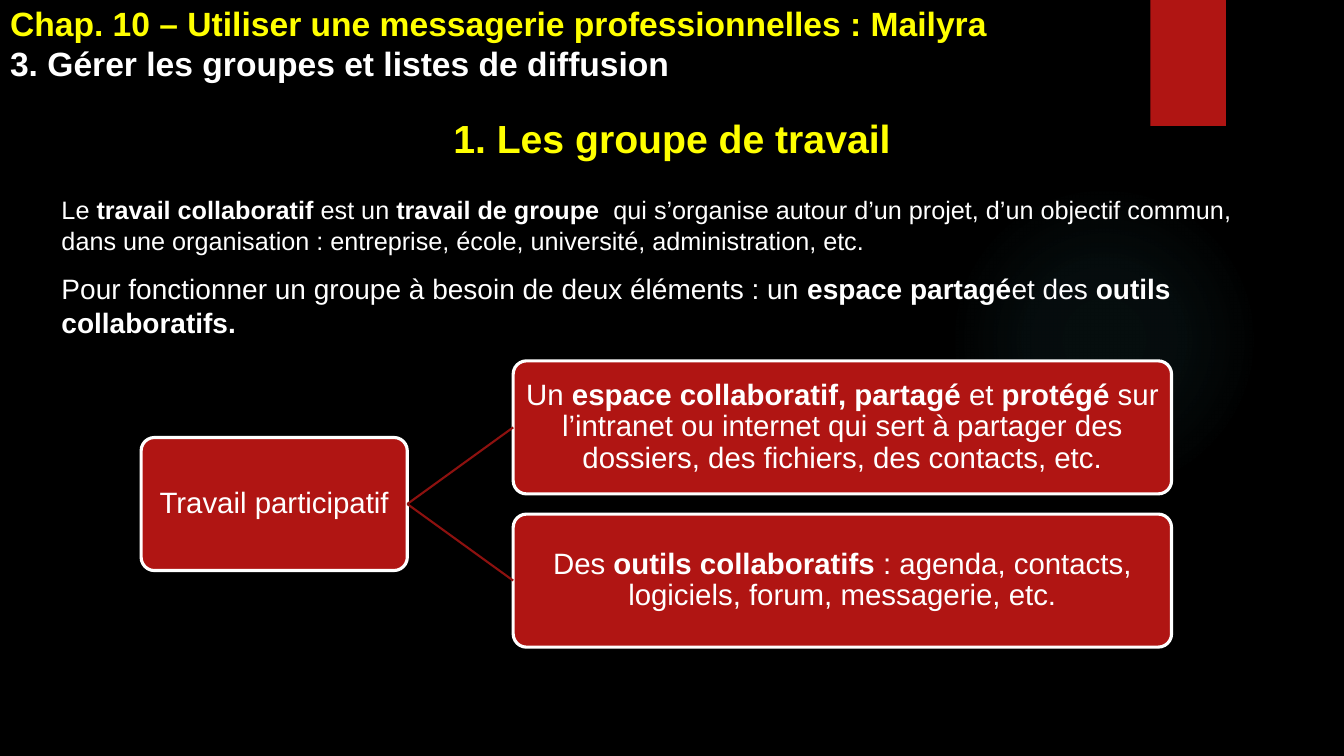
import pptx
import pptx.dml.color
import pptx.enum.shapes
import pptx.enum.text
import pptx.oxml
import pptx.oxml.ns
import pptx.util
from dataclasses import dataclass

Inches = pptx.util.Inches
Pt = pptx.util.Pt
SHAPE = pptx.enum.shapes.MSO_SHAPE
ALIGN = pptx.enum.text.PP_ALIGN
ANCHOR = pptx.enum.text.MSO_ANCHOR


@dataclass(frozen=True)
class Theme:
    font: str = "Arial"
    background: str = "000000"
    text: str = "FFFFFF"
    accent: str = "FFFF00"
    red: str = "B01513"
    link: str = "8D110F"
    glow: str = "50B9C1"
    header_size: float = 24
    heading_size: float = 28
    intro_size: float = 18
    needs_size: float = 20
    box_size: float = 21


def rgb(value):
    return pptx.dml.color.RGBColor.from_string(value)


class SlideBuilder:
    def __init__(self, prs, theme):
        self.theme = theme
        self.s = prs.slides.add_slide(prs.slide_layouts[1])
        self.s.background.fill.solid()
        self.s.background.fill.fore_color.rgb = rgb(theme.background)

    def shape(self, kind, left, top, width, height):
        sp = self.s.shapes.add_shape(
            kind, Inches(left), Inches(top), Inches(width), Inches(height))
        sp.shadow.inherit = False
        sp.fill.solid()
        sp.fill.fore_color.rgb = rgb(self.theme.red)
        sp.line.fill.background()
        return sp

    def send_to_back(self, sp):
        self.s.shapes._spTree.insert(2, sp._element)

    def ribbon(self, left, top, width, height):
        self.send_to_back(self.shape(SHAPE.RECTANGLE, left, top, width, height))

    def glow(self, left, top, size):
        """Draw a disc that fades out from its centre."""
        sp = self.shape(SHAPE.OVAL, left, top, size, size)
        stops = "".join(
            f'<a:gs pos="{pos}000"><a:srgbClr val="{self.theme.glow}">'
            f'<a:alpha val="{alpha}000"/></a:srgbClr></a:gs>'
            for pos, alpha in ((0, 7), (36, 6), (69, 0)))
        gradient = pptx.oxml.parse_xml(
            f'<a:gradFill {pptx.oxml.ns.nsdecls("a")}><a:gsLst>{stops}</a:gsLst>'
            '<a:path path="circle"><a:fillToRect l="50000" t="50000" r="50000"'
            ' b="50000"/></a:path></a:gradFill>')
        solid = sp._element.spPr.find(pptx.oxml.ns.qn("a:solidFill"))
        sp._element.spPr.replace(solid, gradient)
        self.send_to_back(sp)

    def paragraph(self, p, text, size, color, align=ALIGN.LEFT, before=0, spacing=1.0):
        """Fill a paragraph; text between asterisks is bold."""
        p.alignment = align
        p.space_before = Pt(before)
        p.line_spacing = spacing
        for i, part in enumerate(text.split("*")):
            if part:
                r = p.add_run()
                r.text = part
                r.font.name = self.theme.font
                r.font.size = Pt(size)
                r.font.bold = i % 2 == 1
                r.font.color.rgb = rgb(color)

    def placeholder(self, index, left, top, width, height, anchor, paragraphs):
        sp = self.s.placeholders[index]
        sp.left, sp.top = Inches(left), Inches(top)
        sp.width, sp.height = Inches(width), Inches(height)
        tf = sp.text_frame
        tf.word_wrap = True
        tf.auto_size = pptx.enum.text.MSO_AUTO_SIZE.NONE
        tf.vertical_anchor = anchor
        for i, options in enumerate(paragraphs):
            p = tf.add_paragraph() if i else tf.paragraphs[0]
            pPr = p._p.get_or_add_pPr()
            pPr.set("marL", "0")
            pPr.set("indent", "0")
            pPr.append(pptx.oxml.parse_xml(
                f'<a:buNone {pptx.oxml.ns.nsdecls("a")}/>'))
            self.paragraph(p, **options)

    def box(self, left, top, width, height, text):
        sp = self.shape(SHAPE.ROUNDED_RECTANGLE, left, top, width, height)
        sp.adjustments[0] = 0.1
        sp.line.color.rgb = rgb(self.theme.text)
        sp.line.width = Pt(2.25)
        tf = sp.text_frame
        tf.word_wrap = True
        tf.vertical_anchor = ANCHOR.MIDDLE
        tf.margin_left = tf.margin_right = Inches(0.05)
        tf.margin_top = tf.margin_bottom = Inches(0.05)
        self.paragraph(tf.paragraphs[0], text, self.theme.box_size,
                       self.theme.text, ALIGN.CENTER, spacing=0.9)
        return sp

    def link(self, parent, child):
        line = self.s.shapes.add_connector(
            pptx.enum.shapes.MSO_CONNECTOR.STRAIGHT, 0, 0, 0, 0)
        line.begin_connect(parent, 3)
        line.end_connect(child, 1)
        line.line.color.rgb = rgb(self.theme.link)
        line.line.width = Pt(1.5)
        line._element.spPr.append(pptx.oxml.parse_xml(
            f'<a:effectLst {pptx.oxml.ns.nsdecls("a")}/>'))


def main():
    prs = pptx.Presentation()
    prs.slide_width, prs.slide_height = Inches(13.33), Inches(7.5)
    theme = Theme()
    slide = SlideBuilder(prs, theme)

    slide.ribbon(11.41, 0, 0.75, 1.25)
    slide.glow(9.41, 1.83, 3.08)

    slide.placeholder(0, 0, -0.01, 11.81, 0.89, ANCHOR.BOTTOM, [
        dict(text="*Chap. 10 – Utiliser une messagerie professionnelles : Mailyra*",
             size=theme.header_size, color=theme.accent),
        dict(text="*3. Gérer les groupes et listes de diffusion*",
             size=theme.header_size, color=theme.text),
    ])
    slide.placeholder(1, 0.51, 1.08, 12.31, 2.36, ANCHOR.TOP, [
        dict(text="*1. Les groupe de travail*", size=theme.heading_size,
             color=theme.accent, align=ALIGN.CENTER),
        dict(text="Le *travail collaboratif *est un *travail de groupe  *qui s’organise "
                  "autour d’un projet, d’un objectif commun, dans une organisation : "
                  "entreprise, école, université, administration, etc.",
             size=theme.intro_size, color=theme.text, before=24),
        dict(text="Pour fonctionner un groupe à besoin de deux éléments : un "
                  "*espace partagé*et des *outils collaboratifs.*",
             size=theme.needs_size, color=theme.text, before=12),
    ])

    box_height, first_top, pitch = 1.32, 3.58, 1.52
    children = [
        "Un *espace collaboratif, partagé* et *protégé* sur l’intranet ou internet "
        "qui sert à partager des dossiers, des fichiers, des contacts, etc.",
        "Des* outils collaboratifs *: agenda, contacts, logiciels, forum, "
        "messagerie, etc.",
    ]
    root_top = first_top + pitch * (len(children) - 1) / 2
    root = slide.box(1.4, root_top, 2.64, box_height, "Travail participatif")
    for i, text in enumerate(children):
        child = slide.box(5.09, first_top + i * pitch, 6.53, box_height, text)
        slide.link(root, child)

    prs.save("out.pptx")


if __name__ == "__main__":
    main()
